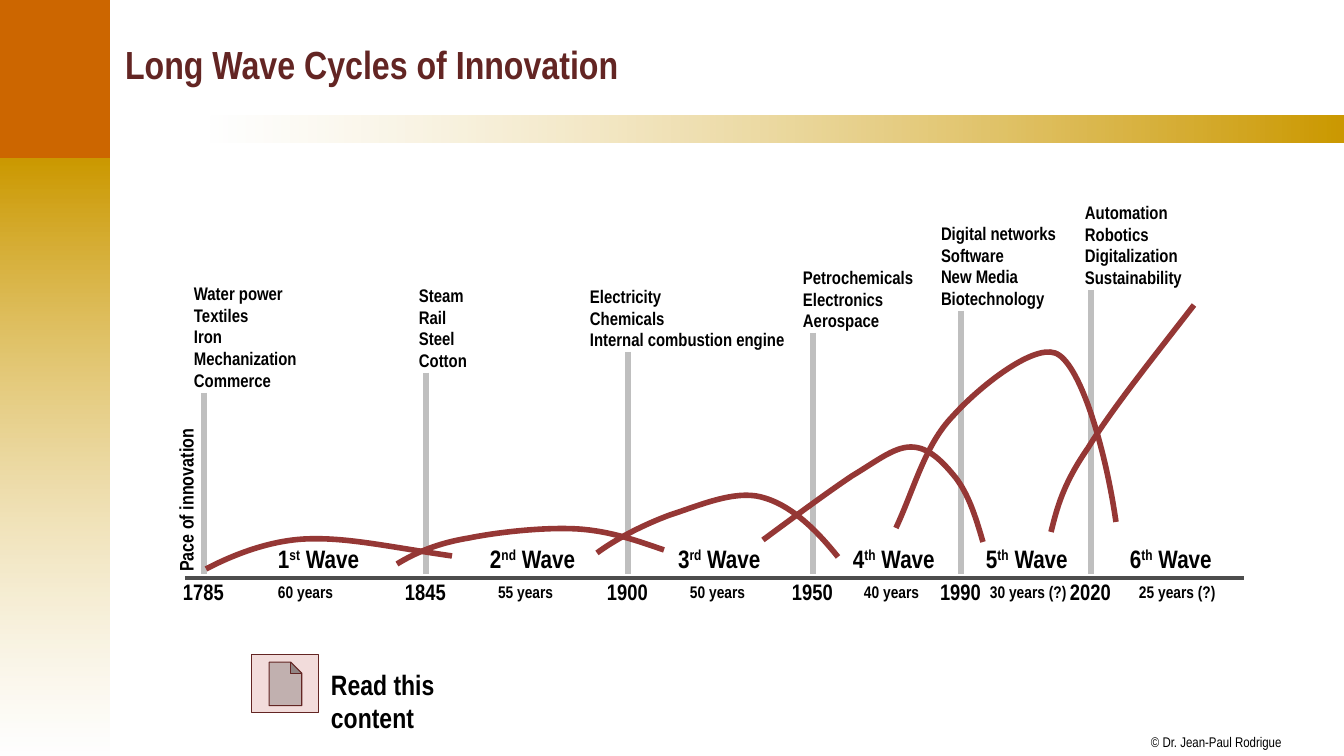
from lxml import etree
from pptx import Presentation
from pptx.dml.color import RGBColor
from pptx.enum.shapes import MSO_CONNECTOR, MSO_SHAPE
from pptx.enum.text import MSO_ANCHOR, PP_ALIGN
from pptx.oxml.ns import qn
from pptx.util import Pt

PX = 12192000 / 1344
FONT = "Arial Narrow"
RECT = MSO_SHAPE.RECTANGLE
DOCUMENT = MSO_SHAPE.ACTION_BUTTON_DOCUMENT
STRAIGHT = MSO_CONNECTOR.STRAIGHT
LEFT = PP_ALIGN.LEFT
MIDDLE = MSO_ANCHOR.MIDDLE

BLACK = RGBColor(0x00, 0x00, 0x00)
WHITE = RGBColor(0xFF, 0xFF, 0xFF)
GOLD = RGBColor(0xCC, 0x99, 0x00)
ORANGE = RGBColor(0xCC, 0x66, 0x00)
MAROON = RGBColor(0x63, 0x25, 0x23)
PINK = RGBColor(0xF2, 0xDC, 0xDB)
RED = RGBColor(0x95, 0x37, 0x35)
SILVER = RGBColor(0xBF, 0xBF, 0xBF)
GRAY = RGBColor(0x4D, 0x4D, 0x4D)


def px(*values):
    return [round(v * PX) for v in values]


def add_text(box, lines, size, bold=True, inset=0, wrap=False):
    tb = s.shapes.add_textbox(*px(*box))
    tf = tb.text_frame
    tf.word_wrap = wrap
    tf.margin_left, tf.margin_top, tf.margin_right, tf.margin_bottom = px(
        inset, inset / 2, inset, inset / 2)
    for i, runs in enumerate(lines):
        p = tf.paragraphs[0] if i == 0 else tf.add_paragraph()
        for j, text in enumerate(runs):
            r = p.add_run()
            r.text = text
            if j == 1:
                r._r.get_or_add_rPr().set("baseline", "30000")
        p.font.name = FONT
        p.font.size = Pt(size)
        p.font.bold = bold
        p.font.color.rgb = BLACK
    return tb


prs = Presentation()
prs.slide_width, prs.slide_height = px(1344, 756)
s = prs.slides.add_slide(prs.slide_layouts[5])

bands = [
    ((-2, 158, 112, 598), 270, [(GOLD, 100), (WHITE, 51)]),
    ((210, 116, 1134, 27), 0, [(WHITE, 50), (GOLD, 100)]),
]
for box, angle, stops in bands:
    sp = s.shapes.add_shape(RECT, *px(*box))
    sp.shadow.inherit = False
    sp.line.fill.background()
    sp.fill.gradient()
    sp.fill.gradient_angle = angle
    for stop, position, (color, opacity) in zip(sp.fill.gradient_stops, (0, 1), stops):
        stop.color.rgb = color
        stop.position = position
    for clr, (color, opacity) in zip(sp._element.spPr.iter(qn("a:srgbClr")), stops):
        if opacity < 100:
            etree.SubElement(clr, qn("a:alpha")).set("val", str(opacity * 1000))

sp = s.shapes.add_shape(RECT, *px(-2, -1, 112, 159))
sp.shadow.inherit = False
sp.fill.solid()
sp.fill.fore_color.rgb = ORANGE
sp.line.fill.background()

add_text((1151, 734, 132, 17), [["© Dr. Jean-Paul Rodrigue"]], 10, bold=False)

title = s.shapes.title
title.left, title.top, title.width, title.height = px(115, 11, 1207, 105)
tf = title.text_frame
tf.vertical_anchor = MIDDLE
tf.text = "Long Wave Cycles of Innovation"
p = tf.paragraphs[0]
p.alignment = LEFT
p.font.name = FONT
p.font.size = Pt(28)
p.font.bold = True
p.font.color.rgb = MAROON

button = s.shapes.add_shape(DOCUMENT, *px(252, 655, 67, 58))
button.shadow.inherit = False
button.fill.solid()
button.fill.fore_color.rgb = PINK
button.line.color.rgb = MAROON
button.line.width = Pt(0.75)
add_text((321, 662, 187, 44), [["Read this content"]], 20, inset=10, wrap=True)

waves = [
    (1785, 204, 393, (194, 282, 104),
     ["Water power", "Textiles", "Iron", "Mechanization", "Commerce"],
     "st", (278, 84), "60 years", (278, 56)),
    (1845, 426, 373, (419, 284, 48),
     ["Steam", "Rail", "Steel", "Cotton"],
     "nd", (490, 89), "55 years", (498, 56)),
    (1900, 628, 352, (590, 285, 197),
     ["Electricity", "Chemicals", "Internal combustion engine"],
     "rd", (678, 86), "50 years", (690, 56)),
    (1950, 813, 333, (803, 266, 111),
     ["Petrochemicals", "Electronics", "Aerospace"],
     "th", (853, 85), "40 years", (864, 56)),
    (1990, 961, 311, (941, 222, 116),
     ["Digital networks", "Software", "New Media", "Biotechnology"],
     "th", (986, 85), "30 years (?)", (990, 78)),
    (2020, 1091, 290, (1085, 201, 98),
     ["Automation", "Robotics", "Digitalization", "Sustainability"],
     "th", (1130, 85), "25 years (?)", (1139, 78)),
]

lines = [((x, top, x, 574), SILVER, 4) for year, x, top, *rest in waves]
lines.append(((185, 578, 1244, 578), GRAY, 3))
for ends, color, width in lines:
    cx = s.shapes.add_connector(STRAIGHT, *px(*ends))
    cx.line.color.rgb = color
    cx.line.width = Pt(width)
    etree.SubElement(cx._element.spPr, qn("a:effectLst"))

for n, (year, x, top, (left, y, w), drivers, suffix, name, years, span) in enumerate(waves, 1):
    add_text((x - 21, 578, 41, 27), [[str(year)]], 16)
    add_text((left, y, w, 22 * len(drivers)), [[d] for d in drivers], 13)
    add_text((name[0], 543, name[1], 30), [[str(n), suffix, " Wave"]], 18)
    add_text((span[0], 582, span[1], 20), [[years]], 12)

pace = add_text((114, 488, 144, 24), [["Pace of innovation"]], 14)
pace.rotation = 270

curves = [
    [(206, 569), (225, 559), (264, 541), (305, 539), (347, 537), (389, 547), (452, 556)],
    [(397, 564), (415, 553), (438, 543), (469, 538), (499, 532), (545, 527), (578, 529),
     (610, 531), (638, 541), (664, 550)],
    [(597, 553), (616, 539), (643, 525), (670, 515), (698, 506), (734, 490), (761, 497),
     (789, 504), (814, 527), (838, 557)],
    [(763, 540), (790, 520), (828, 492), (852, 476), (877, 461), (894, 447), (911, 447),
     (929, 447), (943, 462), (956, 478), (968, 494), (975, 514), (983, 542)],
    [(896, 528), (915, 487), (925, 445), (953, 416), (979, 387), (1032, 345), (1055, 353),
     (1079, 361), (1105, 445), (1116, 522)],
    [(1051, 532), (1057, 508), (1063, 484), (1088, 448), (1112, 409), (1153, 358), (1194, 305)],
]
for start, *points in curves:
    fb = s.shapes.build_freeform(*start, scale=PX)
    fb.add_line_segments(points, close=False)
    curve = fb.convert_to_shape()
    curve.shadow.inherit = False
    curve.fill.background()
    curve.line.color.rgb = RED
    curve.line.width = Pt(4)
    outline = next(curve._element.iter(qn("a:path")))
    steps = outline.findall(qn("a:lnTo"))
    for i in range(0, len(steps), 3):
        bezier = etree.SubElement(outline, qn("a:cubicBezTo"))
        for step in steps[i:i + 3]:
            bezier.append(step[0])
            outline.remove(step)

prs.save("out.pptx")
